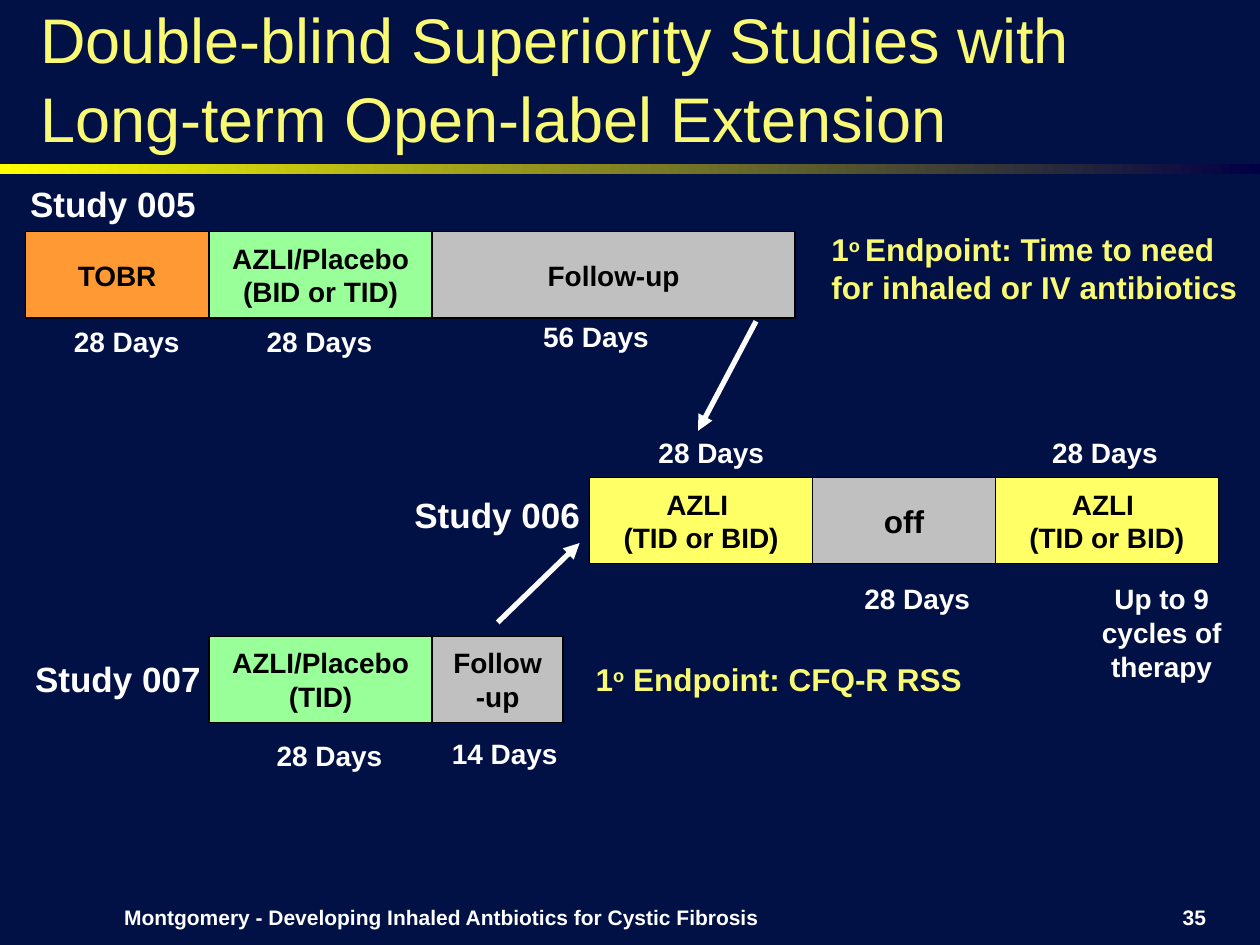
from lxml import etree
from pptx import Presentation, util as u
from pptx.dml.color import RGBColor
from pptx.enum import shapes, text
from pptx.oxml.ns import qn

THEME = dict(
    font="Arial", back="011145", white="FFFFFF", black="000000", title="F9F973",
    orange="FF9933", green="99FF99", grey="C0C0C0", yellow="FFFF66",
    rule=("FFFF00", "000046"),
    size=dict(title=36, study=20, endpoint=18, bar=16, days=16, footer=12),
)
COLS, ROWS = 100, 75
CELL = u.Inches(0.1)
BAR_H = 6.85
LEFT, CENTER, RIGHT = text.PP_ALIGN.LEFT, text.PP_ALIGN.CENTER, text.PP_ALIGN.RIGHT
TOP, MIDDLE, BOTTOM = text.MSO_ANCHOR.TOP, text.MSO_ANCHOR.MIDDLE, text.MSO_ANCHOR.BOTTOM

TITLE = "Double-blind Superiority Studies with Long-term Open-label Extension"
STUDIES = [
    (2, 18.4, [("TOBR", 14.6, "orange", "bar"),
               ("AZLI/Placebo (BID or TID)", 17.7, "green", "bar"),
               ("Follow-up", 28.8, "grey", "bar")]),
    (46.8, 37.9, [("AZLI \v(TID or BID)", 17.7, "yellow", "bar"),
                  ("off", 14.5, "grey", "endpoint"),
                  ("AZLI \v(TID or BID)", 17.7, "yellow", "bar")]),
    (16.6, 50.5, [("AZLI/Placebo (TID)", 17.7, "green", "bar"),
                  ("Follow\v-up", 10.4, "grey", "bar")]),
]
NAMES = [("Study 005", 1.4, 14), ("Study 006", 31.9, 38.7), ("Study 007", 1.8, 51.7)]
DAYS = [
    ("28 Days", 4.2, 25.3, 11.7), ("28 Days", 19.5, 25.3, 11.7),
    ("56 Days", 34.4, 24.9, 25.8), ("28 Days", 49.7, 34.1, 13.5),
    ("28 Days", 81, 34.1, 13.4), ("28 Days", 66.3, 45.7, 13),
    ("Up to 9 cycles of therapy", 85.7, 45.7, 13),
    ("28 Days", 20.3, 58.1, 11.7), ("14 Days", 33.4, 58, 13.3),
]
ENDPOINTS = [
    (("1", "o ", "Endpoint: Time to need for inhaled or IV antibiotics"), 65, 17.8, 35.3),
    (("1", "o", " Endpoint: CFQ-R RSS"), 46.3, 51.9, 33.3),
]
ARROWS = [((60, 25.5), (55.4, 34.2)), ((39.5, 49.4), (46, 43.1))]
FOOTERS = [("Montgomery - Developing Inhaled Antbiotics for Cystic Fibrosis", 3.3, 63.5, CENTER),
           ("35", 74.2, 22.5, RIGHT)]


def grid(*cells):
    return [round(c * CELL) for c in cells]


def rgb(name):
    return RGBColor.from_string(THEME.get(name, name))


def write(sp, parts, size, color, align, anchor=TOP, bold=True):
    tf = sp.text_frame
    tf.word_wrap = True
    tf.vertical_anchor = anchor
    p = tf.paragraphs[0]
    p.alignment = align
    if isinstance(parts, str):
        p.text = parts
    else:
        for part in parts:
            p.add_run().text = part
    for r in p.runs:
        r.font.name, r.font.bold = THEME["font"], bold
        r.font.size = u.Pt(THEME["size"][size])
        r.font.color.rgb = rgb(color)
    return p


def label(s, box, *style, **options):
    return write(s.shapes.add_textbox(*grid(*box)), *style, **options)


def rectangle(s, *box):
    sp = s.shapes.add_shape(shapes.MSO_SHAPE.RECTANGLE, *grid(*box))
    sp.shadow.inherit = False
    return sp


def bar(s, box, words, fill, size):
    sp = rectangle(s, *box)
    sp.fill.solid()
    sp.fill.fore_color.rgb = rgb(fill)
    sp.line.color.rgb = rgb("black")
    sp.line.width = u.Pt(0.75)
    tf = sp.text_frame
    tf.margin_left = tf.margin_right = u.Inches(0.07)
    tf.margin_top = tf.margin_bottom = u.Inches(0.03)
    write(sp, words, size, "black", CENTER, MIDDLE)


def arrow(s, start, end):
    c = s.shapes.add_connector(shapes.MSO_CONNECTOR.STRAIGHT, *grid(*start, *end))
    c.line.color.rgb = rgb("white")
    c.line.width = u.Pt(3)
    etree.SubElement(c.line._get_or_add_ln(), qn("a:tailEnd"), type="triangle")
    etree.SubElement(c._element.spPr, qn("a:effectLst"))


def main():
    prs = Presentation()
    prs.slide_width, prs.slide_height = grid(COLS, ROWS)
    s = prs.slides.add_slide(prs.slide_layouts[6])
    s.background.fill.solid()
    s.background.fill.fore_color.rgb = rgb("back")

    rule = rectangle(s, 0, 13, COLS, 0.8)
    rule.line.fill.background()
    rule.fill.gradient()
    rule.fill.gradient_angle = 0
    for stop, color in zip(rule.fill.gradient_stops, THEME["rule"]):
        stop.color.rgb = rgb(color)

    p = label(s, (2.2, 6.9, 95.1, 5.9), TITLE, "title", "title", LEFT, anchor=BOTTOM, bold=False)
    p.line_spacing = 1.05

    for left, top, phases in STUDIES:
        for words, width, fill, size in phases:
            bar(s, (left, top, width, BAR_H), words, fill, size)
            left += width
    for words, left, top in NAMES:
        label(s, (left, top, 16.5, 4.3), words, "study", "white", LEFT)
    for words, left, top, width in DAYS:
        label(s, (left, top, width, 3.7), words, "days", "white", CENTER)
    for parts, left, top, width in ENDPOINTS:
        p = label(s, (left, top, width, 4), parts, "endpoint", "title", LEFT)
        p.runs[1]._r.get_or_add_rPr().set("baseline", "30000")
    for start, end in ARROWS:
        arrow(s, start, end)
    for words, left, width, align in FOOTERS:
        label(s, (left, 70.8, width, 4), words, "footer", "white", align, anchor=MIDDLE)

    prs.save("out.pptx")


if __name__ == "__main__":
    main()
